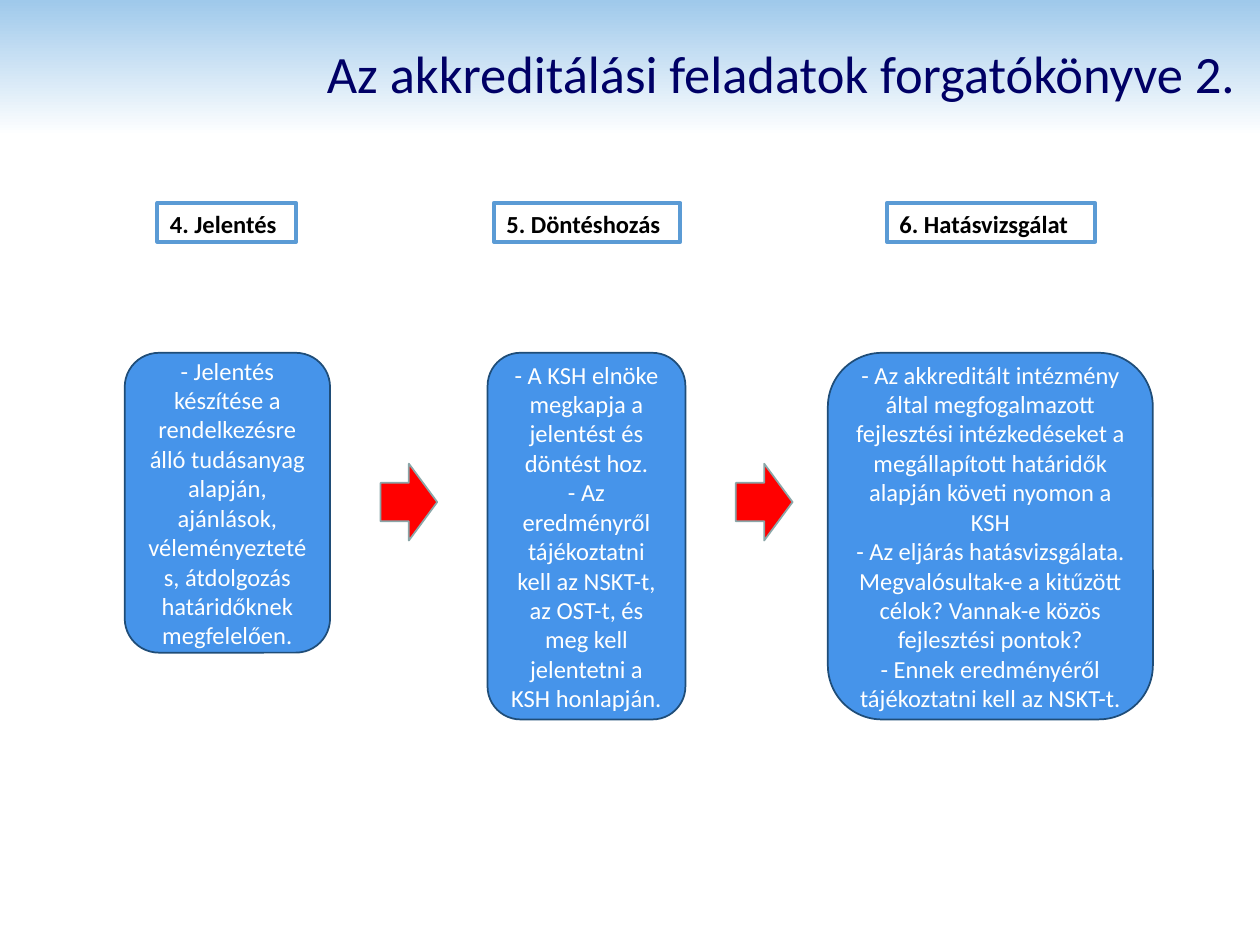
from dataclasses import dataclass

from pptx import Presentation
from pptx.dml.color import RGBColor as Rgb
from pptx.enum.shapes import MSO_SHAPE as Preset
from pptx.enum.text import MSO_ANCHOR as Anchor, PP_ALIGN as Align
from pptx.util import Inches, Pt


@dataclass(frozen=True)
class Theme:
    font: str = "Calibri"
    title_size: int = 30
    body_size: int = 14
    band: str = "9FC9EB"
    white: str = "FFFFFF"
    black: str = "000000"
    navy: str = "000066"
    card: str = "4694EA"
    card_line: str = "1F4D78"
    label_line: str = "5B9BD5"
    arrow: str = "FF0000"
    arrow_line: str = "8AA6A8"


class Slide:
    COLUMNS, ROWS = 100, 75

    def __init__(self, deck, theme):
        self.theme = theme
        self.column = deck.slide_width / self.COLUMNS
        self.row = deck.slide_height / self.ROWS
        self.page = deck.slides.add_slide(deck.slide_layouts[5])

    def place(self, left, top, width, height):
        return (round(left * self.column), round(top * self.row),
                round(width * self.column), round(height * self.row))

    def shape(self, preset, area, fill, line, weight=1):
        shape = self.page.shapes.add_shape(preset, *self.place(*area))
        shape.shadow.inherit = False
        shape.fill.solid()
        shape.fill.fore_color.rgb = Rgb.from_string(fill)
        shape.line.color.rgb = Rgb.from_string(line)
        shape.line.width = Pt(weight)
        return shape

    def add_text(self, box, texts, size, color, align=Align.CENTER,
                 anchor=Anchor.MIDDLE, bold=False):
        frame = box.text_frame
        frame.word_wrap = True
        frame.vertical_anchor = anchor
        for index, text in enumerate(texts):
            para = frame.add_paragraph() if index else frame.paragraphs[0]
            para.alignment = align
            span = para.add_run()
            span.text = text
            span.font.name = self.theme.font
            span.font.size = Pt(size)
            span.font.bold = bold
            span.font.color.rgb = Rgb.from_string(color)

    def band(self, *area):
        theme = self.theme
        band = self.shape(Preset.RECTANGLE, area, theme.band, theme.band)
        band.line.fill.background()
        band.fill.gradient()
        band.fill.gradient_angle = 270
        for stop, color in zip(band.fill.gradient_stops, (theme.band, theme.white)):
            stop.color.rgb = Rgb.from_string(color)

    def title(self, text, *area):
        title = self.page.shapes.title
        title.left, title.top, title.width, title.height = self.place(*area)
        self.add_text(title, [text], self.theme.title_size, self.theme.navy)
        title.element.getparent().append(title.element)

    def label(self, text, *area):
        theme = self.theme
        label = self.shape(Preset.RECTANGLE, area, theme.white, theme.label_line, 2.25)
        self.add_text(label, [text], theme.body_size, theme.black,
                      Align.LEFT, Anchor.TOP, True)

    def card(self, texts, *area):
        theme = self.theme
        card = self.shape(Preset.ROUNDED_RECTANGLE, area, theme.card, theme.card_line)
        self.add_text(card, texts, theme.body_size, theme.white)

    def arrow(self, *area):
        self.shape(Preset.RIGHT_ARROW, area, self.theme.arrow, self.theme.arrow_line)


STEPS = [
    ("4. Jelentés", (12.5, 11), (9.9, 16.3, 23.8), [
        "- Jelentés készítése a rendelkezésre álló tudásanyag alapján, ajánlások, "
        "véleményeztetés, átdolgozás határidőknek megfelelően.",
    ]),
    ("5. Döntéshozás", (39.2, 14.8), (38.7, 15.7, 29.1), [
        "- A KSH elnöke megkapja a jelentést és döntést hoz.",
        "- Az eredményről tájékoztatni kell az NSKT-t, az OST-t, és meg kell "
        "jelentetni a KSH honlapján.",
    ]),
    ("6. Hatásvizsgálat", (70.4, 16.5), (65.7, 25.8, 29.1), [
        "- Az akkreditált intézmény által megfogalmazott fejlesztési intézkedéseket "
        "a megállapított határidők alapján követi nyomon a KSH",
        "- Az eljárás hatásvizsgálata. Megvalósultak-e a kitűzött célok? "
        "Vannak-e közös fejlesztési pontok?",
        "- Ennek eredményéről tájékoztatni kell az NSKT-t.",
    ]),
]
LABEL_TOP, LABEL_HEIGHT = 16.1, 3.1
CARD_TOP = 28
ARROW_TOP, ARROW_WIDTH, ARROW_HEIGHT = 36.8, 4.5, 6.1
ARROW_LEFTS = (30.2, 58.4)


def main():
    deck = Presentation()
    deck.slide_width, deck.slide_height = Inches(10), Inches(7.5)
    slide = Slide(deck, Theme())
    slide.band(0, 0, Slide.COLUMNS, 10.8)
    for name, (label_left, label_width), (left, width, height), texts in STEPS:
        slide.card(texts, left, CARD_TOP, width, height)
        slide.label(name, label_left, LABEL_TOP, label_width, LABEL_HEIGHT)
    for left in ARROW_LEFTS:
        slide.arrow(left, ARROW_TOP, ARROW_WIDTH, ARROW_HEIGHT)
    slide.title("Az akkreditálási feladatok forgatókönyve 2.", 24, 2, 76, 7.5)
    deck.save("out.pptx")


if __name__ == "__main__":
    main()
